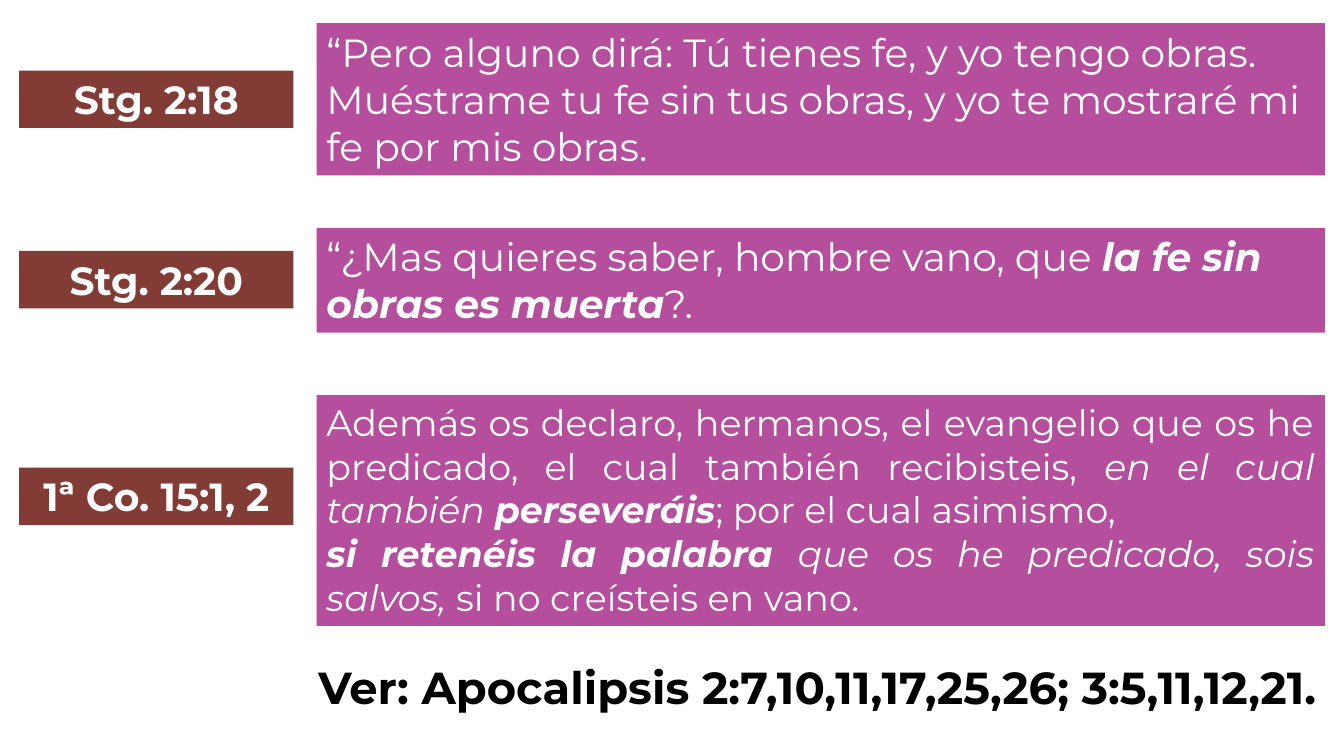
"""Builds a slide of three Bible references, each beside its verse, with a closing reference."""
from dataclasses import dataclass

from pptx import Presentation
from pptx import util as u
from pptx.dml.color import RGBColor
from pptx.enum import shapes, text

REGULAR, ITALIC, STRONG = (False, False), (False, True), (True, True)

VERSES = [
    {"reference": "Stg. 2:18", "top": 0.23, "height": 1.51, "label_top": 0.7, "size": 28,
     "align": text.PP_ALIGN.LEFT,
     "paragraphs": [[("“Pero alguno dirá: Tú tienes fe, y yo tengo obras. Muéstrame tu fe sin "
                      "tus obras, y yo te mostraré mi fe por mis obras.", REGULAR)]]},
    {"reference": "Stg. 2:20", "top": 2.26, "height": 1.04, "label_top": 2.49, "size": 28,
     "align": text.PP_ALIGN.LEFT,
     "paragraphs": [[("“¿Mas quieres saber, hombre vano, que ", REGULAR),
                     ("la fe sin obras es muerta", STRONG), ("?.", REGULAR)]]},
    {"reference": "1ª Co. 15:1, 2", "top": 3.92, "height": 2.29, "label_top": 4.64, "size": 26,
     "align": text.PP_ALIGN.JUSTIFY,
     "paragraphs": [[("Además os declaro, hermanos, el evangelio que os he predicado, "
                      "el cual también recibisteis, ", REGULAR),
                     ("en el cual también ", ITALIC), ("perseveráis", STRONG),
                     ("; por el cual asimismo,", REGULAR)],
                    [("si retenéis la palabra ", STRONG),
                     ("que os he predicado, sois salvos, ", ITALIC),
                     ("si no creísteis en vano.", REGULAR)]]},
]
CLOSING = "Ver: Apocalipsis 2:7,10,11,17,25,26; 3:5,11,12,21."

SLIDE_SIZE = (13.33, 7.5)
LABEL_LEFT, LABEL_WIDTH, LABEL_HEIGHT = 0.19, 2.72, 0.57
VERSE_LEFT, VERSE_WIDTH = 3.14, 10
CLOSING_BOX = (3.06, 6.82, 10.28, 0.37)


@dataclass(frozen=True)
class Theme:
    font: str = "Montserrat"
    label: str = "823B35"
    verse: str = "B54E9D"
    light: str = "FFFFFF"
    dark: str = "000000"
    label_size: int = 28
    closing_size: int = 32


THEME = Theme()


def write(frame, paragraphs, *, size, color, align=text.PP_ALIGN.LEFT, wrap=True,
          anchor=text.MSO_ANCHOR.TOP, line_spacing=None, space_after=None):
    frame.word_wrap = wrap
    frame.vertical_anchor = anchor
    for index, runs in enumerate(paragraphs):
        paragraph = frame.add_paragraph() if index else frame.paragraphs[0]
        paragraph.alignment = align
        paragraph.line_spacing = line_spacing
        paragraph.space_after = space_after
        for words, (bold, italic) in runs:
            run = paragraph.add_run()
            run.text = words
            run.font.name = THEME.font
            run.font.size = u.Pt(size)
            run.font.bold, run.font.italic = bold, italic
            run.font.color.rgb = RGBColor.from_string(color)


def add_panel(slide, box, fill):
    shape = slide.shapes.add_shape(shapes.MSO_SHAPE.RECTANGLE, *map(u.Inches, box))
    shape.shadow.inherit = False
    shape.fill.solid()
    shape.fill.fore_color.rgb = RGBColor.from_string(fill)
    shape.line.fill.background()
    return shape.text_frame


def main():
    presentation = Presentation()
    presentation.slide_width, presentation.slide_height = map(u.Inches, SLIDE_SIZE)
    slide = presentation.slides.add_slide(presentation.slide_layouts[6])

    for verse in VERSES:
        label = add_panel(slide, (LABEL_LEFT, verse["label_top"], LABEL_WIDTH, LABEL_HEIGHT),
                          THEME.label)
        write(label, [[(verse["reference"], (True, False))]], size=THEME.label_size,
              color=THEME.light, align=text.PP_ALIGN.CENTER)
        panel = add_panel(slide, (VERSE_LEFT, verse["top"], VERSE_WIDTH, verse["height"]),
                          THEME.verse)
        write(panel, verse["paragraphs"], size=verse["size"], color=THEME.light,
              align=verse["align"])

    closing = slide.shapes.add_textbox(*map(u.Inches, CLOSING_BOX)).text_frame
    write(closing, [[(CLOSING, (True, False))]], size=THEME.closing_size, color=THEME.dark,
          wrap=False, line_spacing=u.Pt(15), space_after=u.Pt(12))
    presentation.save("out.pptx")


if __name__ == "__main__":
    main()
